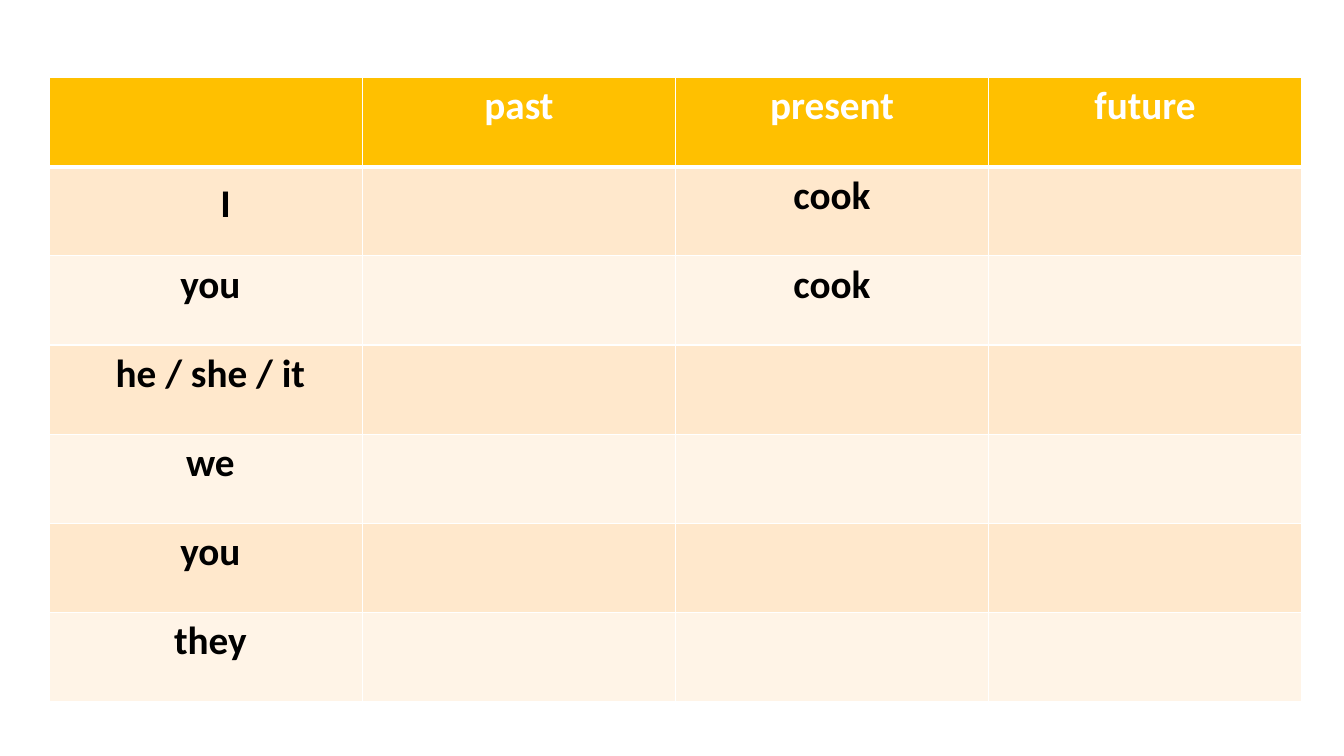
from dataclasses import dataclass

from lxml import etree
from pptx import Presentation
from pptx.dml.color import RGBColor
from pptx.enum import text
from pptx.oxml.ns import qn
from pptx.util import Inches, Pt


@dataclass(frozen=True)
class Theme:
    font: str = "Calibri"
    size: int = 28
    header: str = "FFC000"
    bands: tuple = ("FFE8CC", "FFF4E7")
    header_text: str = "FFFFFF"
    body_text: str = "000000"
    border: str = "FFFFFF"
    thin: int = 1
    thick: int = 3


theme = Theme()


def write(cell, words, *, color, size=theme.size, bold=True,
          align=text.PP_ALIGN.CENTER):
    p = cell.text_frame.paragraphs[0]
    p.alignment = align
    r = p.add_run()
    r.text = words
    r.font.name = theme.font
    r.font.size = Pt(size)
    r.font.bold = bold
    r.font.color.rgb = RGBColor.from_string(color)


def add_borders(cell, **widths):
    """Draw the sides L, R, T and B, in that order, with widths in points."""
    tc_pr = cell._tc.get_or_add_tcPr()
    for side, width in widths.items():
        ln = etree.SubElement(tc_pr, qn(f"a:ln{side}"), w=str(Pt(width)))
        fill = etree.SubElement(ln, qn("a:solidFill"))
        etree.SubElement(fill, qn("a:srgbClr"), val=theme.border)


prs = Presentation()
prs.slide_width, prs.slide_height = Inches(13.33), Inches(7.5)
s = prs.slides.add_slide(prs.slide_layouts[6])

rows = [
    ("", "past", "present", "future"),
    ("　I", "", "cook", ""),
    (" you", "", "cook", ""),
    (" he / she / it", "", "", ""),
    (" we", "", "", ""),
    (" you", "", "", ""),
    (" they", "", "", ""),
]

table = s.shapes.add_table(len(rows), len(rows[0]), Inches(0.49), Inches(0.77),
                           Inches(12.42), Inches(6.19)).table

for i, row in enumerate(rows):
    is_header = i == 0
    fill = theme.header if is_header else theme.bands[(i - 1) % 2]
    color = theme.header_text if is_header else theme.body_text
    for j, words in enumerate(row):
        cell = table.cell(i, j)
        add_borders(cell, L=theme.thin, R=theme.thin,
                    T=theme.thick if i == 1 else theme.thin,
                    B=theme.thick if is_header else theme.thin)
        cell.fill.solid()
        cell.fill.fore_color.rgb = RGBColor.from_string(fill)
        if words:
            write(cell, words, color=color)

prs.save("out.pptx")
